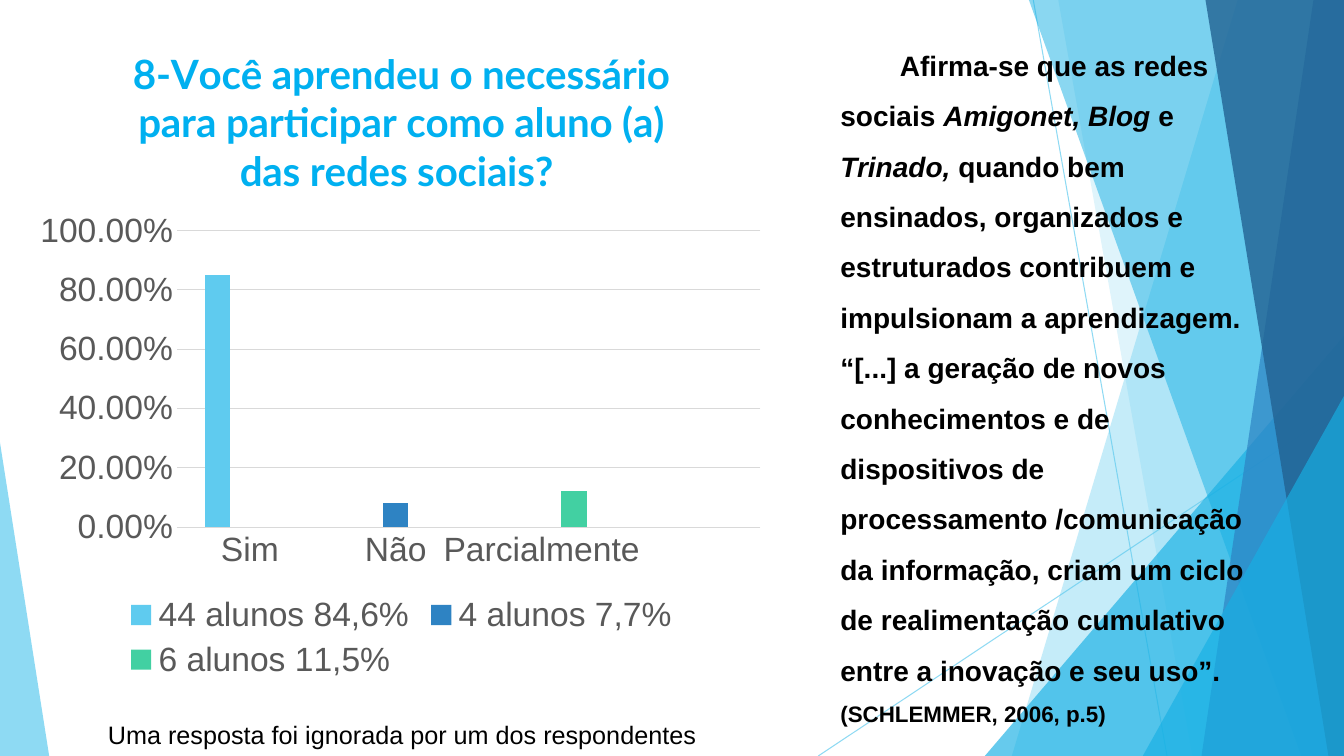
from lxml import etree
from pptx import Presentation
from pptx.chart.data import CategoryChartData
from pptx.dml.color import RGBColor
from pptx.enum.chart import XL_CHART_TYPE, XL_LEGEND_POSITION, XL_TICK_MARK
from pptx.enum.shapes import MSO_CONNECTOR, MSO_SHAPE
from pptx.enum.text import PP_ALIGN
from pptx.oxml import parse_xml
from pptx.oxml.ns import nsdecls, qn
from pptx.util import Cm, Pt

SKY = RGBColor(0x5F, 0xCB, 0xEF)
CYAN = RGBColor(0x17, 0xB0, 0xE4)
BLUE = RGBColor(0x2E, 0x83, 0xC3)
NAVY = RGBColor(0x22, 0x62, 0x92)
GREEN = RGBColor(0x42, 0xD0, 0xA2)
TITLE_BLUE = RGBColor(0x00, 0xB0, 0xF0)
BLACK = RGBColor(0x00, 0x00, 0x00)
GREY = RGBColor(0x59, 0x59, 0x59)
GRID = RGBColor(0xD9, 0xD9, 0xD9)

WIDTH, HEIGHT = 33.87, 19.05

ANSWERS = [
    ("Sim", "44 alunos 84,6%", 0.85, SKY),
    ("Não", "4 alunos 7,7%", 0.08, BLUE),
    ("Parcialmente", "6 alunos 11,5%", 0.12, GREEN),
]
QUESTION = "8-Você aprendeu o necessário para participar como aluno (a)\vdas redes sociais? "
CONCLUSION = [
    ("Afirma-se que as redes sociais ", 20, False),
    ("Amigonet, Blog ", 20, True),
    ("e ", 20, False),
    ("Trinado, ", 20, True),
    ("quando bem ensinados, organizados e estruturados contribuem e "
     "impulsionam a aprendizagem. “[...] a geração de novos conhecimentos e de "
     "dispositivos de processamento /comunicação da informação, criam um ciclo "
     "de realimentação cumulativo entre a inovação e seu uso”. ", 20, False),
    ("(SCHLEMMER, 2006, p.5)", 16, False),
]


def set_opacity(fill_owner, percent):
    color = fill_owner.find(".//" + qn("a:srgbClr"))
    etree.SubElement(color, qn("a:alpha"), val=str(percent * 1000))


def paint(shape, color, opacity):
    shape.shadow.inherit = False
    shape.fill.solid()
    shape.fill.fore_color.rgb = color
    set_opacity(shape._element.spPr, opacity)
    shape.line.fill.background()


def add_ray(slide, start, end):
    ray = slide.shapes.add_connector(
        MSO_CONNECTOR.STRAIGHT, *(Cm(value) for value in start + end))
    ray.line.color.rgb = SKY
    ray.line.width = Pt(0.75)
    set_opacity(ray._element.spPr, 70)
    etree.SubElement(ray._element.spPr, qn("a:effectLst"))


def add_band(slide, top_left, bottom_left, color, opacity):
    """Fill the slide from a slanted left side to its right edge."""
    outline = slide.shapes.build_freeform(Cm(top_left), Cm(0))
    outline.add_line_segments(
        [(Cm(x), Cm(y)) for x, y in
         ((WIDTH, 0), (WIDTH, HEIGHT), (bottom_left, HEIGHT))], close=True)
    paint(outline.convert_to_shape(), color, opacity)


def add_corner(slide, left, top, width, apex, color, opacity):
    """Add a triangle standing on the bottom edge of the slide."""
    corner = slide.shapes.add_shape(
        MSO_SHAPE.ISOSCELES_TRIANGLE, Cm(left), Cm(top), Cm(width), Cm(HEIGHT - top))
    corner.adjustments[0] = apex
    paint(corner, color, opacity)


def add_backdrop(slide):
    add_ray(slide, (26.04, 0), (29.41, HEIGHT))
    add_ray(slide, (WIDTH, 10.24), (20.62, HEIGHT))
    add_band(slide, 31.19, 25.5, SKY, 36)
    add_band(slide, 26.67, 30.05, SKY, 20)
    add_corner(slide, 24.82, 8.46, 9.05, 1, CYAN, 66)
    add_band(slide, 25.93, 32.79, CYAN, 50)
    add_band(slide, 33.1, 30.28, BLUE, 70)
    add_band(slide, 30.38, 33.48, NAVY, 80)
    add_corner(slide, 28.8, 9.98, 5.07, 1, CYAN, 66)
    add_corner(slide, 0, 11.15, 1.24, 0, SKY, 70)


def style_font(font, size, color, name="Arial", bold=False):
    font.size = Pt(size)
    font.name = name
    font.bold = bold
    font.color.rgb = color


def add_indented_text(slide, box, pieces, bold=False, align=PP_ALIGN.LEFT):
    frame = slide.shapes.add_textbox(*(Cm(value) for value in box)).text_frame
    frame.word_wrap = True
    paragraph = frame.paragraphs[0]
    paragraph.alignment = align
    paragraph.line_spacing = 1.5
    paragraph._p.get_or_add_pPr().set("indent", str(Cm(1.5)))
    for text, size, italic in pieces:
        run = paragraph.add_run()
        run.text = text
        style_font(run.font, size, BLACK, bold=bold)
        run.font.italic = italic


def place_plot(chart, x, y, w, h):
    """Fix the area inside the axes, in fractions of the chart."""
    plot_area = chart._chartSpace.chart.plotArea
    for former in plot_area.findall(qn("c:layout")):
        plot_area.remove(former)
    plot_area.insert(0, parse_xml(
        f'<c:layout {nsdecls("c")}><c:manualLayout><c:layoutTarget val="inner"/>'
        '<c:xMode val="edge"/><c:yMode val="edge"/>'
        f'<c:x val="{x}"/><c:y val="{y}"/><c:w val="{w}"/><c:h val="{h}"/>'
        '</c:manualLayout></c:layout>'))


def style_axes(chart):
    answers, share = chart.category_axis, chart.value_axis
    for axis in (answers, share):
        axis.major_tick_mark = axis.minor_tick_mark = XL_TICK_MARK.NONE
        style_font(axis.tick_labels.font, 24, GREY)
    answers.format.line.color.rgb = GRID
    answers.format.line.width = Pt(0.75)
    share.format.line.fill.background()
    share.minimum_scale, share.maximum_scale, share.major_unit = 0, 1, 0.2
    share.tick_labels.number_format = "0.00%"
    share.tick_labels.number_format_is_linked = False
    share.major_gridlines.format.line.color.rgb = GRID
    share.major_gridlines.format.line.width = Pt(0.75)


def add_answer_chart(slide):
    data = CategoryChartData(number_format="0.00%")
    data.categories = [answer for answer, *_ in ANSWERS] + [""]
    for index, (_, label, share, _) in enumerate(ANSWERS):
        data.add_series(label, [share if i == index else None
                                for i in range(len(ANSWERS) + 1)])
    chart = slide.shapes.add_chart(
        XL_CHART_TYPE.COLUMN_CLUSTERED, Cm(0.69), Cm(0.66), Cm(18.85), Cm(16.61),
        data).chart
    style_font(chart.font, 24, BLACK, "Lato")
    plot = chart.plots[0]
    plot.gap_width, plot.overlap = 219, -27
    plot.vary_by_categories = False
    for series, (*_, color) in zip(plot.series, ANSWERS):
        series.format.fill.solid()
        series.format.fill.fore_color.rgb = color
    style_axes(chart)
    chart.has_title = True
    question = chart.chart_title.text_frame
    question.text = QUESTION
    for run in question.paragraphs[0].runs:
        style_font(run.font, 28.8, TITLE_BLUE, "Lato", True)
    chart.chart_title.include_in_layout = False
    place_plot(chart, 0.2, 0.31, 0.78, 0.45)
    chart.has_legend = True
    chart.legend.position = XL_LEGEND_POSITION.BOTTOM
    chart.legend.include_in_layout = False
    style_font(chart.legend.font, 24, GREY)


def main():
    presentation = Presentation()
    presentation.slide_width, presentation.slide_height = Cm(WIDTH), Cm(HEIGHT)
    slide = presentation.slides.add_slide(presentation.slide_layouts[6])
    add_backdrop(slide)
    add_indented_text(slide, (20.93, 0.67, 10.77, 18.21), CONCLUSION, bold=True)
    add_answer_chart(slide)
    add_indented_text(
        slide, (0.97, 17.61, 18.59, 1.27),
        [("Uma resposta foi ignorada por um dos respondentes", 18, False)],
        align=PP_ALIGN.JUSTIFY)
    presentation.save("out.pptx")


if __name__ == "__main__":
    main()
